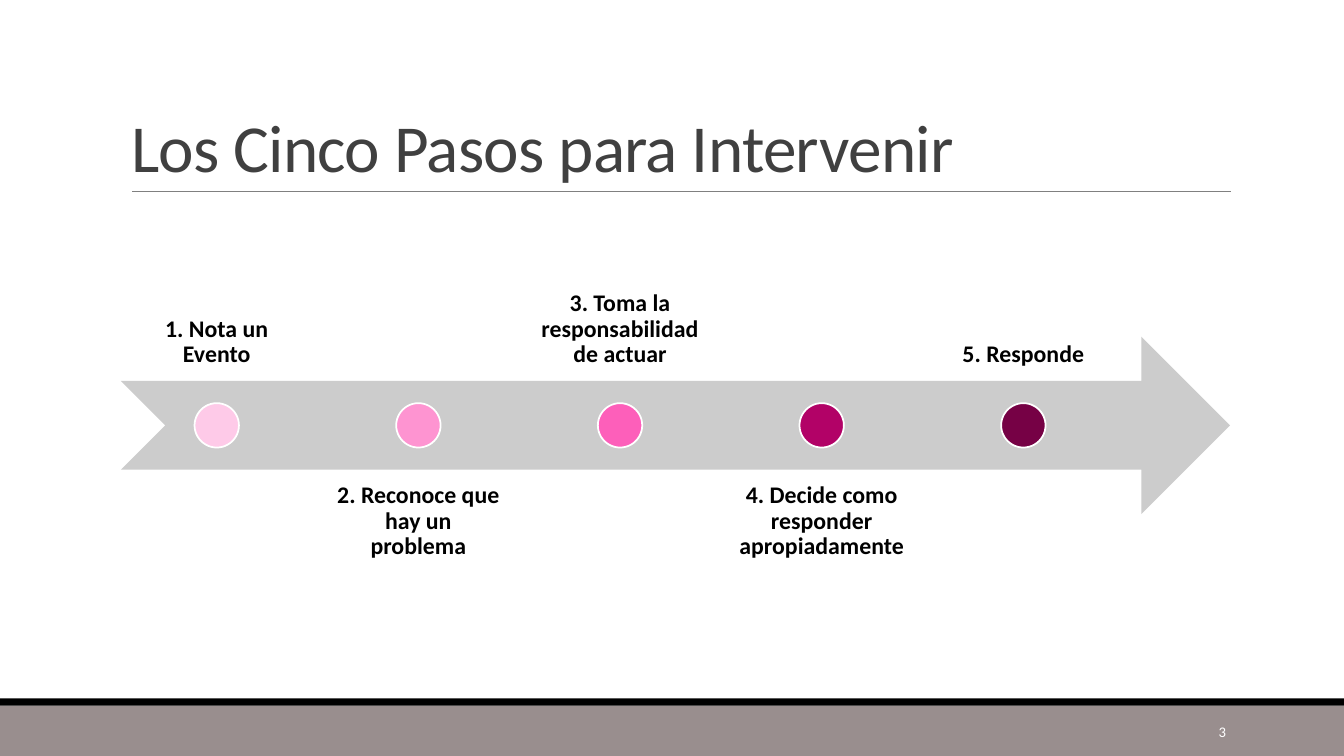
from dataclasses import dataclass
from pptx import Presentation
from pptx.dml.color import RGBColor as Rgb
from pptx.enum.shapes import MSO_CONNECTOR as Link, MSO_SHAPE as Kind
from pptx.enum.text import MSO_ANCHOR as Anchor, MSO_AUTO_SIZE as Fit, PP_ALIGN as Align
from pptx.oxml.ns import qn
from pptx.util import Inches, Pt
from lxml.etree import SubElement as Sub

TITLE = "Los Cinco Pasos para Intervenir"
PAGE = "3"
STEPS = [
    ("1. Nota un Evento", "FECAE8"),
    ("2. Reconoce que hay un problema", "FE94D1"),
    ("3. Toma la responsabilidad de actuar", "FD5FBA"),
    ("4. Decide como responder apropiadamente", "B20267"),
    ("5. Responde", "760145"),
]


@dataclass(frozen=True)
class Theme:
    font: str = "Calibri"
    title: str = "404040"
    ink: str = "000000"
    white: str = "FFFFFF"
    rule: str = "808080"
    arrow: str = "CCCCCC"
    band: str = "998E8E"
    big: float = 48
    step: float = 17
    small: float = 10.5


LOOK = Theme()

deck = Presentation()
deck.slide_width, deck.slide_height = Inches(13.33), Inches(7.5)
slide = deck.slides.add_slide(deck.slide_layouts[5])
shapes = slide.shapes


def paint(kind, box, color, edge=None):
    shape = shapes.add_shape(kind, *map(Inches, box))
    shape.shadow.inherit = False
    shape.fill.solid()
    shape.fill.fore_color.rgb = Rgb.from_string(color)
    if edge:
        shape.line.color.rgb = Rgb.from_string(edge)
        shape.line.width = Pt(1.25)
    else:
        shape.line.fill.background()
    return shape


def write(shape, text, size, color, align, anchor, gap=1.0, bold=False):
    frame = shape.text_frame
    frame.word_wrap = True
    frame.auto_size = Fit.NONE
    frame.vertical_anchor = anchor
    frame.text = text
    line = frame.paragraphs[0]
    line.alignment = align
    line.line_spacing = gap
    font = line.runs[0].font
    font.name, font.size, font.bold = LOOK.font, Pt(size), bold
    font.color.rgb = Rgb.from_string(color)
    return frame


def place(box):
    return shapes.add_textbox(*map(Inches, box))


paint(Kind.RECTANGLE, (0, 7, 13.33, 0.5), LOOK.band)
paint(Kind.RECTANGLE, (0, 6.93, 13.33, 0.07), LOOK.ink)

rule = shapes.add_connector(Link.STRAIGHT, *map(Inches, (1.31, 1.9, 12.21, 1.9)))
rule.line.color.rgb = Rgb.from_string(LOOK.rule)
rule.line.width = Pt(0.5)
Sub(rule._element.spPr, qn("a:effectLst"))

head = shapes.title
head.left, head.top, head.width, head.height = map(Inches, (1.2, 0.31, 11, 1.59))
frame = write(head, TITLE, LOOK.big, LOOK.title, Align.LEFT, Anchor.BOTTOM, 0.85)
frame.paragraphs[0].runs[0].font._element.set("spc", "-50")

LEFT, TALL, WIDE, DOT = 1.2, 1.76, 1.9, 0.44
MID = 4.22
PITCH = 2.0
paint(Kind.NOTCHED_RIGHT_ARROW, (LEFT, MID - TALL / 2, 11, TALL), LOOK.arrow)

for i, (text, color) in enumerate(STEPS):
    left = LEFT + i * PITCH
    above = i % 2 == 0
    top = MID - TALL / 4 - TALL if above else MID + TALL / 4
    label = place((left, top, WIDE, TALL))
    anchor = Anchor.BOTTOM if above else Anchor.TOP
    frame = write(label, text, LOOK.step, LOOK.ink, Align.CENTER, anchor, 0.9, True)
    frame.margin_left = frame.margin_right = Inches(0.13)
    frame.margin_top = frame.margin_bottom = Inches(0.13)
    frame.paragraphs[0].space_after = Pt(6)
    spot = left + (WIDE - DOT) / 2
    paint(Kind.OVAL, (spot, MID - DOT / 2, DOT, DOT), color, LOOK.white)

page = place((10.83, 7.06, 1.43, 0.4))
write(page, PAGE, LOOK.small, LOOK.white, Align.RIGHT, Anchor.MIDDLE)

deck.save("out.pptx")
